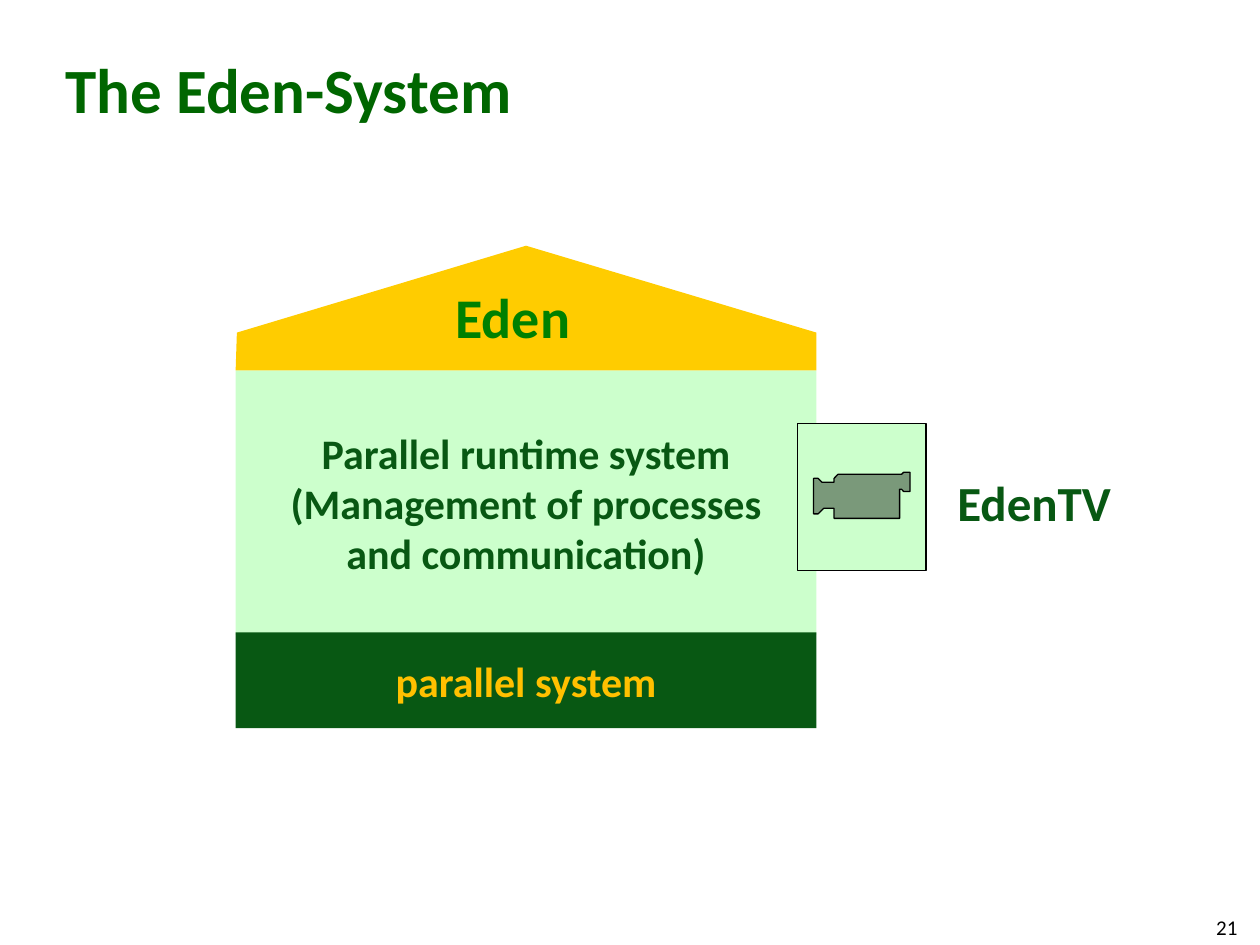
from pptx import Presentation
from pptx import util as u
from pptx.dml.color import RGBColor
from pptx.enum import shapes, text

LEAF, FOREST, GOLD = "CCFFCC", "085813", "FFCC00"


def color(value):
    return RGBColor.from_string(value)


def inches(*values):
    return [u.Inches(value) for value in values]


def paint(shape, fill, line=None):
    shape.shadow.inherit = False
    shape.fill.solid()
    shape.fill.fore_color.rgb = color(fill)
    if line:
        shape.line.color.rgb = color(line)
        shape.line.width = u.Pt(0.75)
    else:
        shape.line.fill.background()


def write(shape, lines, size, ink, align, bold=True, wrap=True, inset=None,
          anchor=text.MSO_ANCHOR.MIDDLE):
    frame = shape.text_frame
    frame.text = "\n".join(lines)
    frame.word_wrap = wrap
    frame.auto_size = text.MSO_AUTO_SIZE.NONE
    frame.vertical_anchor = anchor
    if inset is not None:
        frame.margin_left = frame.margin_right = u.Inches(inset)
        frame.margin_top = frame.margin_bottom = u.Inches(inset)
    for para in frame.paragraphs:
        para.alignment = align
        para.font.name = "Calibri"
        para.font.size = u.Pt(size)
        para.font.bold = bold
        para.font.color.rgb = color(ink)


def add_title(page, box):
    title = page.shapes.title
    title.left, title.top, title.width, title.height = inches(*box)
    write(title, ["The Eden-System"], 36, "006600", text.PP_ALIGN.LEFT)


def add_layer(page, box, lines, fill, ink, inset=None):
    layer = page.shapes.add_shape(shapes.MSO_SHAPE.RECTANGLE, *inches(*box))
    paint(layer, fill)
    write(layer, lines, 24, ink, text.PP_ALIGN.CENTER, inset=inset)


def add_roof(page, box):
    left, top, width, height = box
    right, bottom, eaves = left + width, top + height, top + 0.69
    outline = [(right, bottom), (right, eaves), (left + width / 2, top),
               (left + 0.01, eaves)]
    builder = page.shapes.build_freeform(*inches(left, bottom))
    builder.add_line_segments([inches(*point) for point in outline], close=True)
    paint(builder.convert_to_shape(), GOLD)
    label = page.shapes.add_textbox(*inches(left + 1.74, top + 0.29, 0.92, 0.54))
    write(label, ["Eden"], 32, "008000", text.PP_ALIGN.CENTER, wrap=False, inset=0)


def add_house(page, box):
    left, top, width, height = box
    roof, base, overlap = 0.99, 0.76, 0.02
    add_layer(page, (left, top + roof, width, height - roof - base + overlap),
              ["Parallel runtime system", "(Management of processes",
               "and communication)"], LEAF, FOREST, inset=0)
    add_roof(page, (left, top, width, roof))
    add_layer(page, (left, top + height - base, width, base),
              ["parallel system"], FOREST, "FFC000")


def add_viewer(page, box):
    left, top, width, height = box
    camera = page.shapes.add_shape(shapes.MSO_SHAPE.ACTION_BUTTON_MOVIE,
                                   *inches(left, top, 1.02, height))
    paint(camera, LEAF, "000000")
    camera._element.spPr.xfrm.set("flipH", "1")
    label = page.shapes.add_textbox(
        *inches(left + 1.17, top + 0.34, width - 1.17, 0.57))
    write(label, ["EdenTV"], 28, FOREST, text.PP_ALIGN.LEFT, wrap=False)


def add_page_number(page, box):
    number = page.shapes.add_textbox(*inches(*box))
    write(number, ["21"], 12, "000000", text.PP_ALIGN.RIGHT, bold=False,
          anchor=text.MSO_ANCHOR.TOP)


def main():
    deck = Presentation()
    deck.slide_width, deck.slide_height = inches(10, 7.5)
    page = deck.slides.add_slide(deck.slide_layouts.get_by_name("Title Only"))
    add_title(page, (0.42, 0.08, 9.25, 1.25))
    add_page_number(page, (7.59, 7.21, 2.33, 0.22))
    add_house(page, (1.87, 1.95, 4.61, 3.83))
    add_viewer(page, (6.33, 3.36, 2.6, 1.17))
    deck.save("out.pptx")


if __name__ == "__main__":
    main()
